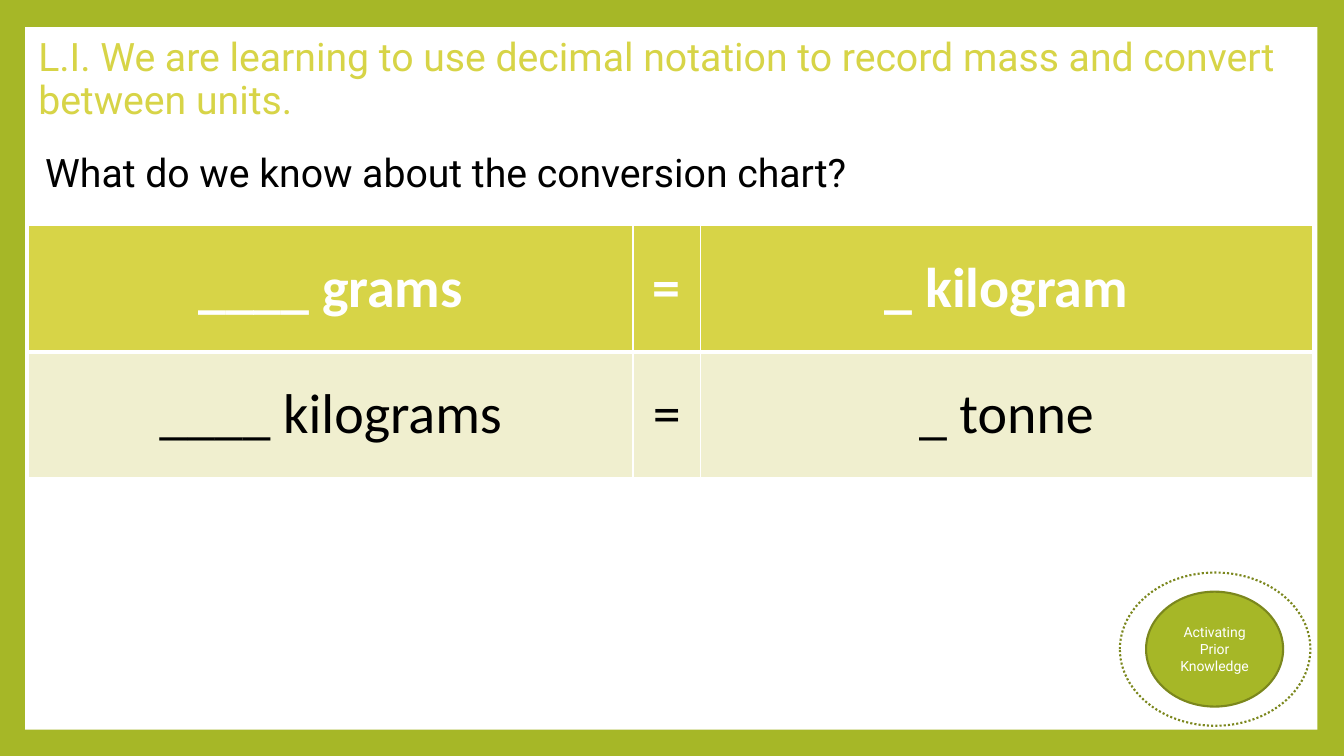
"""Build the mass conversion slide."""
from lxml.etree import SubElement
from pptx import Presentation
from pptx.dml.color import RGBColor
from pptx.enum.dml import MSO_LINE
from pptx.enum.shapes import MSO_SHAPE
from pptx.enum.text import MSO_ANCHOR, MSO_AUTO_SIZE, PP_ALIGN
from pptx.oxml import parse_xml
from pptx.oxml.ns import nsdecls, qn
from pptx.util import Pt

INTENTION = ("L.I. We are learning to use decimal notation to record mass "
             "and convert between units.")
QUESTION = "What do we know about the conversion chart?"
CONVERSIONS = [
    ("____ grams", "=", "_ kilogram"),
    ("____ kilograms", "=", "_ tonne"),
]
STAGE = "Activating Prior Knowledge"

GREEN = RGBColor(0xA6, 0xB7, 0x27)
DARK_GREEN = RGBColor(0x7B, 0x87, 0x1D)
LIME = RGBColor(0xD7, 0xD4, 0x47)
PALE_LIME = RGBColor(0xF0, 0xEF, 0xCF)
WHITE = RGBColor(0xFF, 0xFF, 0xFF)
BLACK = RGBColor(0, 0, 0)

COLUMN_WIDTHS = (432, 48.24, 437.04)
ROW_HEIGHT = 90
ROW_STYLES = [(LIME, WHITE, True), (PALE_LIME, BLACK, False)]
ROW_GAP = 3


def box(left, top, width, height):
    return Pt(left), Pt(top), Pt(width), Pt(height)


def write(frame, words, font, size, color, bold=False, align=PP_ALIGN.LEFT):
    frame.text = words
    paragraph = frame.paragraphs[0]
    paragraph.alignment = align
    for run in paragraph.runs:
        run.font.name = font
        run.font.size = Pt(size)
        run.font.color.rgb = color
        run.font.bold = bold
    return paragraph


def add_plain(shapes, kind, place, fill=None, line=None):
    shape = shapes.add_shape(kind, *place)
    shape.shadow.inherit = False
    if fill is None:
        shape.fill.background()
    else:
        shape.fill.solid()
        shape.fill.fore_color.rgb = fill
    if line is None:
        shape.line.fill.background()
    else:
        shape.line.color.rgb = line
        shape.line.width = Pt(1.5)
    return shape


def add_borders(cell, top, bottom):
    properties = cell._tc.get_or_add_tcPr()
    sides = (("lnL", 1), ("lnR", 1), ("lnT", top), ("lnB", bottom))
    for position, (side, width) in enumerate(sides):
        border = parse_xml(f'<a:{side} {nsdecls("a")} w="{Pt(width)}"/>')
        paint = SubElement(border, qn("a:solidFill"))
        SubElement(paint, qn("a:srgbClr"), val=str(WHITE))
        properties.insert(position, border)


def add_conversions(slide):
    row_count = len(CONVERSIONS)
    place = box(20.16, 161.28, sum(COLUMN_WIDTHS), ROW_HEIGHT * row_count)
    chart = slide.shapes.add_table(row_count, len(COLUMN_WIDTHS), *place).table
    for column, width in zip(chart.columns, COLUMN_WIDTHS):
        column.width = Pt(width)
    for r, (entries, (fill, color, bold)) in enumerate(zip(CONVERSIONS, ROW_STYLES)):
        chart.rows[r].height = Pt(ROW_HEIGHT)
        top = ROW_GAP if r > 0 else 1
        bottom = ROW_GAP if r < row_count - 1 else 1
        for c, entry in enumerate(entries):
            cell = chart.cell(r, c)
            cell.fill.solid()
            cell.fill.fore_color.rgb = fill
            cell.vertical_anchor = MSO_ANCHOR.MIDDLE
            write(cell.text_frame, entry, "Calibri", 40, color, bold, PP_ALIGN.CENTER)
            add_borders(cell, top, bottom)


def add_badge(slide):
    badge = slide.shapes.add_group_shape()
    disc = add_plain(badge.shapes, MSO_SHAPE.OVAL,
                     box(818.64, 422.64, 97.92, 82.08), GREEN, DARK_GREEN)
    disc.text_frame.word_wrap = True
    disc.text_frame.vertical_anchor = MSO_ANCHOR.MIDDLE
    write(disc.text_frame, STAGE, "Roboto", 10, WHITE, align=PP_ALIGN.CENTER)
    ring = add_plain(badge.shapes, MSO_SHAPE.OVAL,
                     box(799.92, 408.96, 136.08, 109.44), line=DARK_GREEN)
    ring.line.dash_style = MSO_LINE.ROUND_DOT


def main():
    deck = Presentation()
    deck.slide_width, deck.slide_height = Pt(960), Pt(540)
    slide = deck.slides.add_slide(deck.slide_layouts[5])
    slide.background.fill.solid()
    slide.background.fill.fore_color.rgb = GREEN

    title = slide.shapes.title
    panel = add_plain(slide.shapes, MSO_SHAPE.RECTANGLE,
                      box(18, 19.44, 923.04, 501.84), WHITE)
    title._element.addprevious(panel._element)
    title.left, title.top, title.width, title.height = box(20.16, 23.04, 917.28, 68.4)
    title.text_frame.vertical_anchor = MSO_ANCHOR.MIDDLE
    title.text_frame.auto_size = MSO_AUTO_SIZE.NONE
    write(title.text_frame, INTENTION, "Roboto", 28, LIME).line_spacing = 0.9

    add_conversions(slide)
    add_badge(slide)

    question = slide.shapes.add_textbox(*box(25.2, 102.24, 910.8, 41.04))
    question.text_frame.word_wrap = True
    question.text_frame.auto_size = MSO_AUTO_SIZE.SHAPE_TO_FIT_TEXT
    write(question.text_frame, QUESTION, "Roboto", 28, BLACK)

    deck.save("out.pptx")


if __name__ == "__main__":
    main()
